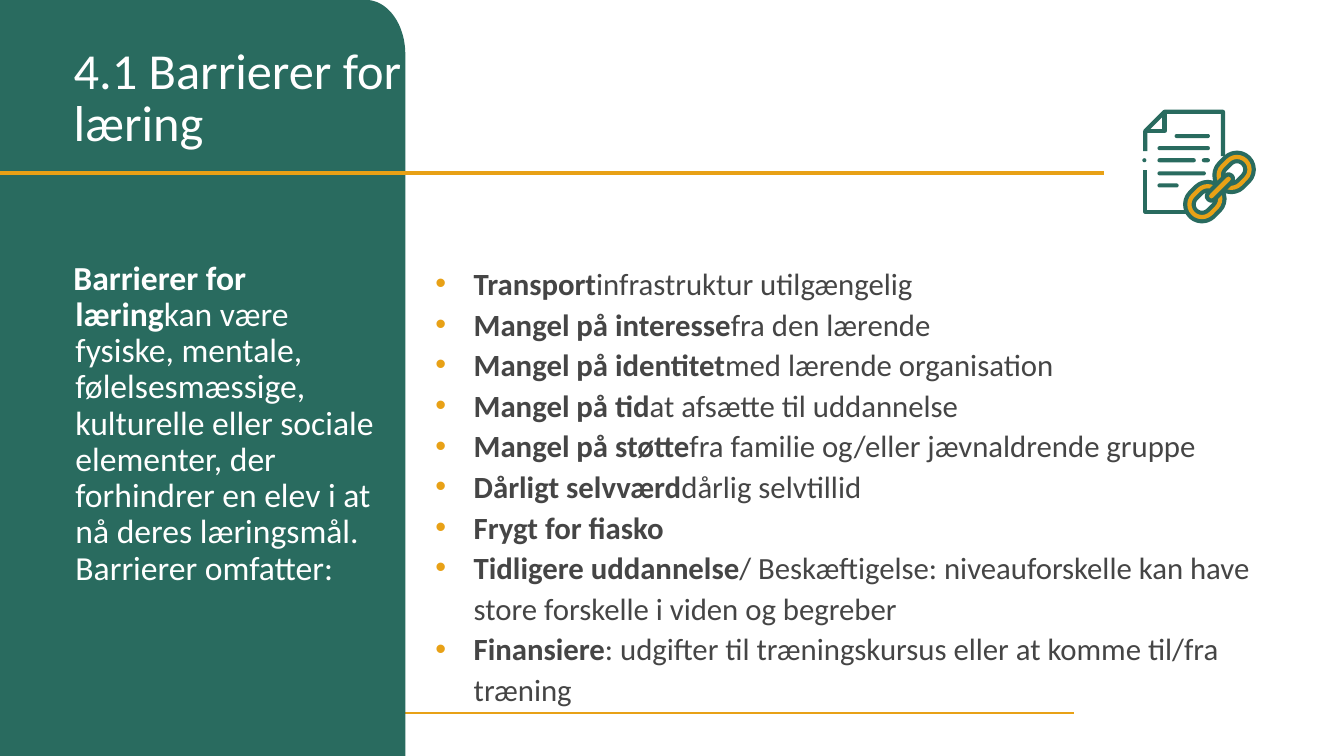
import math

from lxml import etree
from pptx import Presentation
from pptx.dml.color import RGBColor
from pptx.enum import shapes, text
from pptx.oxml import ns
from pptx.util import Inches, Pt

GREEN = RGBColor(0x29, 0x6B, 0x5F)
GOLD = RGBColor(0xE8, 0xA1, 0x16)
GREY = RGBColor(0x45, 0x45, 0x45)
WHITE = RGBColor(0xFF, 0xFF, 0xFF)
FONT = "Calibri"
STROKE = 3

INTRO = ("Barrierer for læring",
         "kan være fysiske, mentale, følelsesmæssige, kulturelle eller sociale "
         "elementer, der forhindrer en elev i at nå deres læringsmål. "
         "Barrierer omfatter:")
BARRIERS = [
    ("Transport", "infrastruktur utilgængelig"),
    ("Mangel på interesse", "fra den lærende"),
    ("Mangel på identitet", "med lærende organisation"),
    ("Mangel på tid", "at afsætte til uddannelse"),
    ("Mangel på støtte", "fra familie og/eller jævnaldrende gruppe"),
    ("Dårligt selvværd", "dårlig selvtillid"),
    ("Frygt for fiasko", ""),
    ("Tidligere uddannelse", "/ Beskæftigelse: niveauforskelle kan have "
                             "store forskelle i viden og begreber"),
    ("Finansiere", ": udgifter til træningskursus eller at komme til/fra træning"),
]


def paint(sp, fill=None, line=None, width=STROKE):
    sp.shadow.inherit = False
    if fill is None:
        sp.fill.background()
    else:
        sp.fill.solid()
        sp.fill.fore_color.rgb = fill
    if line is None:
        sp.line.fill.background()
    else:
        sp.line.color.rgb = line
        sp.line.width = Pt(width)


def add_rule(s, x1, x2, y, width):
    rule = s.shapes.add_connector(shapes.MSO_CONNECTOR.STRAIGHT, Inches(x1),
                                  Inches(y), Inches(x2), Inches(y))
    rule.line.color.rgb = GOLD
    rule.line.width = Pt(width)
    etree.SubElement(rule._element.spPr, ns.qn("a:effectLst"))


def add_path(s, points, close=False):
    points = [(Inches(x), Inches(y)) for x, y in points]
    builder = s.shapes.build_freeform(*points[0], scale=1.0)
    builder.add_line_segments(points[1:], close=close)
    return builder.convert_to_shape()


def add_capsule(s, cx, cy, w, h, angle=0):
    sp = s.shapes.add_shape(shapes.MSO_SHAPE.ROUNDED_RECTANGLE,
                            Inches(cx - w / 2), Inches(cy - h / 2),
                            Inches(w), Inches(h))
    sp.adjustments[0] = 0.5
    sp.rotation = angle
    return sp


def add_panel(s):
    right, height, rx, ry = 4.02, 7.5, 0.39, 0.54
    steps = 24
    angles = [math.pi / 2 * i / steps for i in range(steps + 1)]
    corner = [(right - rx + rx * math.sin(a), ry - ry * math.cos(a)) for a in angles]
    panel = add_path(s, [(0, 0), *corner, (right, height), (0, height)], close=True)
    paint(panel, fill=GREEN)


def add_icon(s):
    # Page outline with folded corner
    left, right, top, bottom, fold = 11.36, 12.13, 1.11, 2.1, 0.19
    for points in (
        [(left, 1.5), (left, top + fold), (left + fold, top), (right, top), (right, 1.55)],
        [(left, top + fold), (left + fold, top + fold), (left + fold, top)],
        [(left, 1.69), (left, bottom), (11.76, bottom)],
    ):
        paint(add_path(s, points), line=GREEN)

    # Lines of writing: left, width, middle
    for x, w, y in ((11.65, 0.35, 1.35), (11.48, 0.52, 1.47), (11.48, 0.38, 1.59),
                    (11.92, 0.08, 1.59), (11.33, 0.04, 1.59), (11.48, 0.48, 1.72),
                    (11.48, 0.21, 1.84)):
        paint(add_capsule(s, x + w / 2, y, w, 0.04), fill=GREEN)

    # Two chain links and the bar that joins them
    for cx, cy in ((11.95, 2.0), (12.24, 1.71)):
        for color, width in ((GREEN, 3 * STROKE), (GOLD, STROKE)):
            paint(add_capsule(s, cx, cy, 0.33, 0.25, -45), line=color, width=width)
    paint(add_capsule(s, 12.1, 1.86, 0.33, 0.09, -45), fill=GOLD, line=GREEN)


def add_run(p, words, size, color, bold=False):
    r = p.add_run()
    r.text = words
    r.font.name = FONT
    r.font.size = Pt(size)
    r.font.color.rgb = color
    r.font.bold = bold


def place(sp, left, top, width, height):
    sp.left, sp.top = Inches(left), Inches(top)
    sp.width, sp.height = Inches(width), Inches(height)
    tf = sp.text_frame
    tf.word_wrap = True
    tf.auto_size = text.MSO_AUTO_SIZE.NONE
    tf.vertical_anchor = text.MSO_ANCHOR.TOP
    return tf


def add_text(s, left, top, width, height):
    return place(s.shapes.add_textbox(0, 0, 0, 0), left, top, width, height)


def indent(p, hang):
    pPr = p._p.get_or_add_pPr()
    pPr.set("marL", str(Inches(hang)))
    pPr.set("indent", str(-Inches(hang)))
    return pPr


def add_bullet(p):
    pPr = indent(p, 0.38)
    color = etree.SubElement(pPr, ns.qn("a:buClr"))
    etree.SubElement(color, ns.qn("a:srgbClr"), val=str(GOLD))
    etree.SubElement(pPr, ns.qn("a:buFont"), typeface="Arial")
    etree.SubElement(pPr, ns.qn("a:buChar"), char="•")


def add_barriers(s):
    tf = add_text(s, 4.22, 2.54, 8.45, 3.75)
    for i, (lead, rest) in enumerate(BARRIERS):
        p = tf.paragraphs[0] if i == 0 else tf.add_paragraph()
        add_bullet(p)
        p.line_spacing = Pt(29)
        add_run(p, lead, 22, GREY, bold=True)
        if rest:
            add_run(p, rest, 22, GREY)


def add_intro(s):
    p = add_text(s, 0.63, 2.54, 3.21, 3.75).paragraphs[0]
    indent(p, 0.02)
    p.line_spacing = 0.9
    lead, rest = INTRO
    add_run(p, lead, 24, WHITE, bold=True)
    add_run(p, rest, 24, WHITE)


def set_title(s):
    title = s.shapes.title
    p = place(title, 0.63, 0.42, 3.73, 0.88).paragraphs[0]
    p.alignment = text.PP_ALIGN.LEFT
    p.line_spacing = Pt(37.2)
    add_run(p, "4.1 Barrierer for læring", 36, WHITE)
    # Bring the title in front of the panel
    s.shapes._spTree.append(title._element)


def main():
    prs = Presentation()
    prs.slide_width, prs.slide_height = Inches(13.33), Inches(7.5)
    s = prs.slides.add_slide(prs.slide_layouts[5])

    # Background panel and rules
    add_rule(s, 0, 10.65, 7.07, 1.5)
    add_panel(s)
    add_rule(s, 0, 10.95, 1.72, 2.75)

    # Icon and text
    add_icon(s)
    add_barriers(s)
    add_intro(s)
    set_title(s)
    prs.save("out.pptx")


if __name__ == "__main__":
    main()
